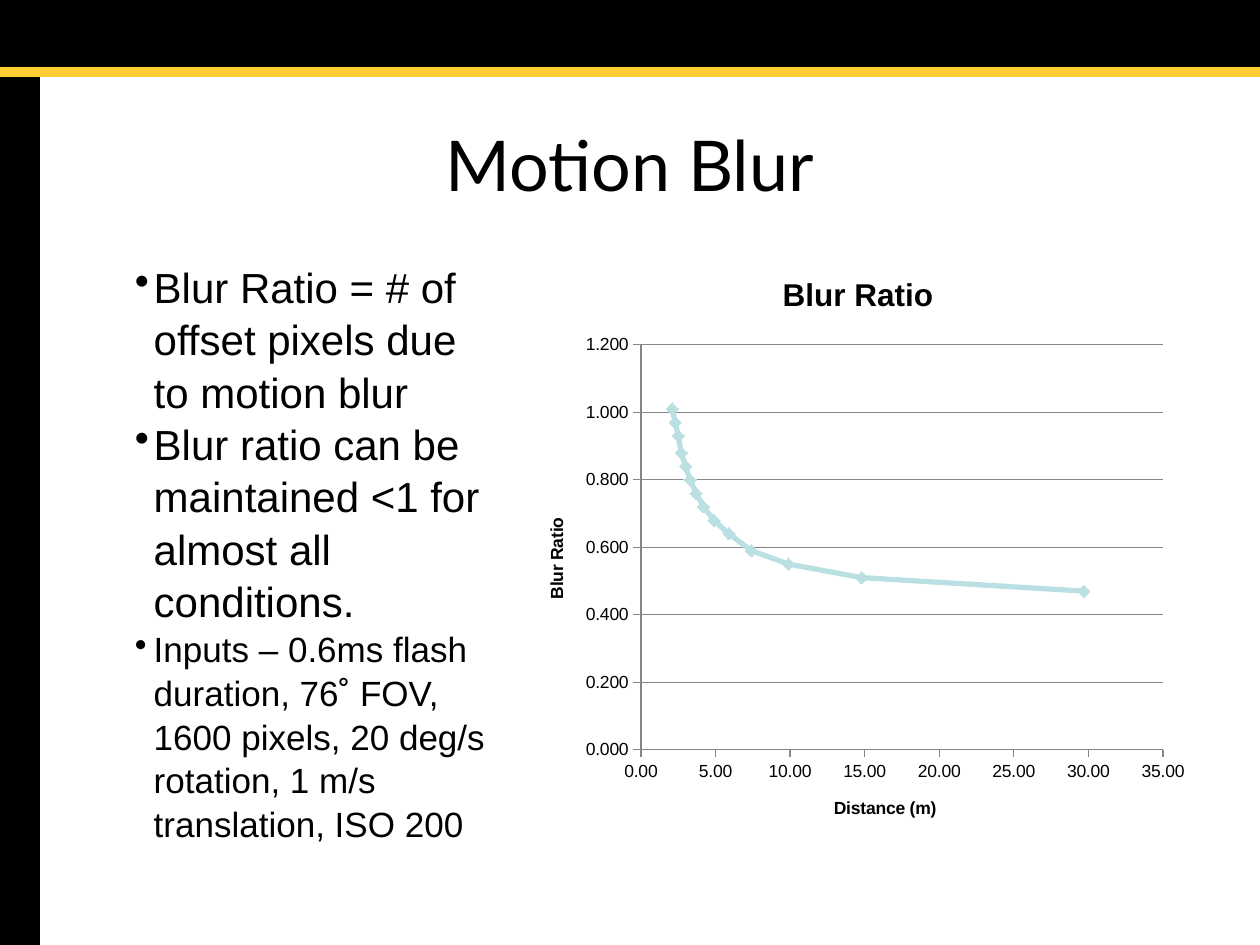
from lxml import etree
from pptx import Presentation
from pptx.chart.data import XyChartData
from pptx.dml.color import RGBColor
from pptx.enum import chart as chart_enum, shapes, text
from pptx.oxml import parse_xml
from pptx.oxml.ns import nsdecls, qn
from pptx.util import Cm, Pt

TITLE = "Motion Blur"
BULLETS = [
    ("Blur Ratio = # of offset pixels due to motion blur", "body"),
    ("Blur ratio can be maintained <1 for almost all conditions.", "body"),
    ("Inputs – 0.6ms flash duration, 76˚ FOV, 1600 pixels, 20 deg/s rotation, "
     "1 m/s translation, ISO 200", "detail"),
]
SERIES = "Blur Ratio"
DISTANCE_TITLE = "Distance (m)"
POINTS = [
    (29.7, 0.47), (14.8, 0.51), (9.9, 0.55), (7.4, 0.59), (5.9, 0.64),
    (4.9, 0.68), (4.2, 0.72), (3.7, 0.76), (3.3, 0.8), (3, 0.84),
    (2.7, 0.88), (2.5, 0.93), (2.3, 0.97), (2.1, 1.01),
]
PLOT = {"x": 0.18, "y": 0.16, "w": 0.77, "h": 0.68}
THEME = {
    "ink": RGBColor(0, 0, 0),
    "gold": RGBColor(0xFF, 0xCE, 0x36),
    "curve": RGBColor(0xBB, 0xE0, 0xE3),
    "axis": RGBColor(0x86, 0x86, 0x86),
    "title_font": "Lato",
    "font": "Arial",
    "title": Pt(40), "body": Pt(24), "detail": Pt(20),
    "chart_title": Pt(18), "chart": Pt(10),
}
WIDTH, HEIGHT = 25.4, 19.05
BARS = [(0, 0, WIDTH, 1.37), (0, 0, 0.79, HEIGHT)]
RULE_Y = 1.45


def set_font(font, size, name=THEME["font"], bold=False):
    font.size = THEME[size]
    font.name = name
    font.bold = bold
    font.color.rgb = THEME["ink"]


def add_frame(slide):
    for box in BARS:
        bar = slide.shapes.add_shape(shapes.MSO_SHAPE.RECTANGLE, *map(Cm, box))
        bar.shadow.inherit = False
        bar.fill.solid()
        bar.fill.fore_color.rgb = THEME["ink"]
        bar.line.color.rgb = THEME["ink"]
        bar.line.width = Pt(0.75)
    rule = slide.shapes.add_connector(
        shapes.MSO_CONNECTOR.STRAIGHT, 0, Cm(RULE_Y), Cm(WIDTH), Cm(RULE_Y))
    rule.line.color.rgb = THEME["gold"]
    rule.line.width = Pt(6)
    etree.SubElement(rule.element.spPr, qn("a:effectLst"))


def add_text_frame(slide, *box):
    text_frame = slide.shapes.add_textbox(*map(Cm, box)).text_frame
    text_frame.word_wrap = True
    for side in ("left", "top", "right", "bottom"):
        setattr(text_frame, f"margin_{side}", Cm(0.25))
    return text_frame


def add_title(slide):
    text_frame = add_text_frame(slide, 1.9, 1.7, 21.6, 3.18)
    text_frame.vertical_anchor = text.MSO_ANCHOR.MIDDLE
    text_frame.text = TITLE
    paragraph = text_frame.paragraphs[0]
    paragraph.alignment = text.PP_ALIGN.CENTER
    set_font(paragraph.runs[0].font, "title", THEME["title_font"])


def add_bullets(slide):
    text_frame = add_text_frame(slide, 1.9, 4.98, 8.18, 12.04)
    text_frame.text = "\n".join(words for words, size in BULLETS)
    for paragraph, (words, size) in zip(text_frame.paragraphs, BULLETS):
        properties = paragraph._p.get_or_add_pPr()
        properties.set("marL", str(Cm(0.95)))
        properties.set("indent", str(Cm(-0.38)))
        etree.SubElement(properties, qn("a:buChar"), char="•")
        paragraph.line_spacing = 1.04
        set_font(paragraph.runs[0].font, size)


def set_title(owner, words, size):
    text_frame = (owner.chart_title if hasattr(owner, "chart_title")
                  else owner.axis_title).text_frame
    text_frame.text = words
    set_font(text_frame.paragraphs[0].runs[0].font, size, bold=True)


def style_axis(axis, words, maximum, step, number_format):
    set_title(axis, words, "chart")
    axis.minimum_scale, axis.maximum_scale, axis.major_unit = 0, maximum, step
    axis.major_tick_mark = chart_enum.XL_TICK_MARK.OUTSIDE
    axis.minor_tick_mark = chart_enum.XL_TICK_MARK.NONE
    axis.tick_labels.number_format = number_format
    axis.tick_labels.number_format_is_linked = False
    axis.format.line.color.rgb = THEME["axis"]


def add_blur_chart(slide):
    data = XyChartData()
    series_data = data.add_series(SERIES)
    for distance, ratio in POINTS:
        series_data.add_data_point(distance, ratio)
    chart = slide.shapes.add_chart(
        chart_enum.XL_CHART_TYPE.XY_SCATTER_SMOOTH,
        *map(Cm, (10.46, 5.03, 13.67, 12.01)), data).chart
    set_font(chart.font, "chart")
    chart.has_legend = False
    set_title(chart, SERIES, "chart_title")
    style_axis(chart.category_axis, DISTANCE_TITLE, 35, 5, "0.00")
    style_axis(chart.value_axis, SERIES, 1.2, 0.2, "0.000")
    chart.category_axis.has_major_gridlines = False
    chart.value_axis.has_major_gridlines = True
    chart.value_axis.major_gridlines.format.line.color.rgb = THEME["axis"]

    plot = chart.plots[0]
    plot.vary_by_categories = False
    series = plot.series[0]
    series.smooth = True
    series.format.line.color.rgb = THEME["curve"]
    series.format.line.width = Pt(3)
    marker = series.marker
    marker.style = chart_enum.XL_MARKER_STYLE.DIAMOND
    marker.size = 7
    marker.format.fill.solid()
    marker.format.fill.fore_color.rgb = THEME["curve"]
    marker.format.line.color.rgb = THEME["curve"]

    plot_area = chart.element.find(".//" + qn("c:plotArea"))
    for layout in plot_area.findall(qn("c:layout")):
        plot_area.remove(layout)
    edges = "".join(f'<c:{edge}Mode val="edge"/>' for edge in "xy")
    sizes = "".join(f'<c:{key} val="{value}"/>' for key, value in PLOT.items())
    plot_area.insert(0, parse_xml(
        f'<c:layout {nsdecls("c")}><c:manualLayout><c:layoutTarget val="inner"/>'
        f'{edges}{sizes}</c:manualLayout></c:layout>'))


def main():
    presentation = Presentation()
    presentation.slide_width, presentation.slide_height = Cm(WIDTH), Cm(HEIGHT)
    slide = presentation.slides.add_slide(presentation.slide_layouts[6])
    add_frame(slide)
    add_title(slide)
    add_bullets(slide)
    add_blur_chart(slide)
    presentation.save("out.pptx")


if __name__ == "__main__":
    main()
